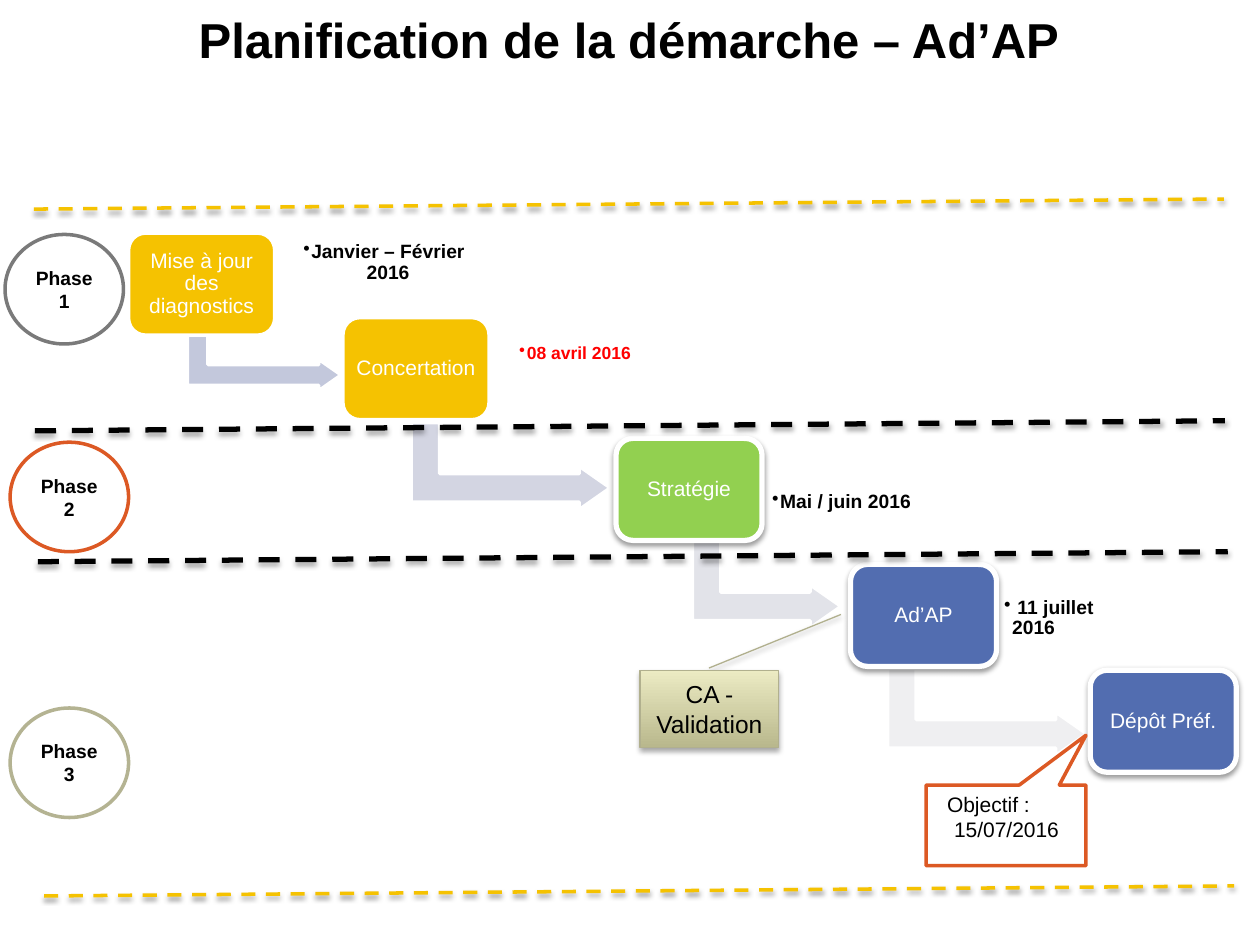
"""Build the Ad'AP planning slide: five cascading steps across three phases."""
from lxml.etree import SubElement
from pptx import Presentation
from pptx.dml.color import RGBColor
from pptx.enum.dml import MSO_LINE_DASH_STYLE as Dash
from pptx.enum.shapes import MSO_CONNECTOR as Connector, MSO_SHAPE as Shape
from pptx.enum.text import MSO_ANCHOR as Anchor, PP_ALIGN as Align
from pptx.oxml.ns import qn
from pptx.util import Pt

COLOURS = {
    "black": "000000", "white": "FFFFFF", "yellow": "F5C201", "green": "92D050",
    "blue": "526DB0", "red": "FF0000", "orange": "DC5924", "grey": "7A7A7A",
    "khaki": "B4B392", "olive": "B1B08E", "olive_dark": "B9B88D", "olive_light": "ECEBC3",
    "arrow1": "C3C8DC", "arrow2": "D3D5E2", "arrow3": "E2E3E9", "arrow4": "EFEFF1",
}
COLOURS = {name: RGBColor.from_string(value) for name, value in COLOURS.items()}


def write(shape, text, size, colour="black", bold=False, align=Align.CENTER,
          anchor=Anchor.MIDDLE, insets=(7.2, 3.6), spacing=1.0):
    frame = shape.text_frame
    frame.text = text
    frame.word_wrap = True
    frame.vertical_anchor = anchor
    frame.margin_left = frame.margin_right = Pt(insets[0])
    frame.margin_top = frame.margin_bottom = Pt(insets[1])
    for para in frame.paragraphs:
        para.alignment = align
        para.line_spacing = spacing
        for span in para.runs:
            span.font.name = "Arial"
            span.font.size = Pt(size)
            span.font.bold = bold
            span.font.color.rgb = COLOURS[colour]


def cast_shadow(shape, opacity=38, distance=1.6):
    effects = SubElement(shape._element.spPr, qn("a:effectLst"))
    shadow = SubElement(effects, qn("a:outerShdw"), blurRad=str(Pt(3.1)),
                        dist=str(Pt(distance)), dir="5400000", rotWithShape="0")
    tint = SubElement(shadow, qn("a:srgbClr"), val=str(COLOURS["black"]))
    SubElement(tint, qn("a:alpha"), val=str(opacity * 1000))


deck = Presentation()
deck.slide_width, deck.slide_height = Pt(720), Pt(540)
page = deck.slides.add_slide(deck.slide_layouts[6])

title = page.shapes.add_textbox(Pt(53.3), Pt(9.4), Pt(612), Pt(53.3))
write(title, "Planification de la démarche – Ad’AP", 28, bold=True,
      anchor=Anchor.TOP, insets=(0, 0), spacing=0.9)

steps = [
    ("Mise à jour des diagnostics", 73.5, 133.2, "yellow", (133, 161.3, 36, 88)),
    ("Concertation", 196, 181.5, "yellow", (267, 209.5, 49.7, 113.8)),
    ("Stratégie", 352, 250.5, "green", (413.3, 291.6, 49.7, 85)),
    ("Ad’AP", 486, 322.5, "blue", (539.3, 350, 49.7, 113.8)),
    ("Dépôt Préf.", 623, 383, "blue", None),
]
for number, (label, left, top, colour, arrow_frame) in enumerate(steps, 1):
    if arrow_frame:
        arrow = page.shapes.add_shape(Shape.BENT_UP_ARROW, *map(Pt, arrow_frame))
        arrow.rotation = 90
        for index, value in enumerate((0.328, 0.25, 0.358)):
            arrow.adjustments[index] = value
        arrow.fill.solid()
        arrow.fill.fore_color.rgb = COLOURS[f"arrow{number}"]
        arrow.line.color.rgb = COLOURS["white"]
        arrow.line.width = Pt(2)
        arrow.shadow.inherit = False
    step = page.shapes.add_shape(Shape.ROUNDED_RECTANGLE, Pt(left), Pt(top), Pt(83.5), Pt(58.3))
    step.fill.solid()
    step.fill.fore_color.rgb = COLOURS[colour]
    step.line.color.rgb = COLOURS["white"]
    step.line.width = Pt(2 if colour == "yellow" else 3)
    if colour == "yellow":
        step.shadow.inherit = False
    else:
        cast_shadow(step)
    write(step, label, 12, "white", insets=(3.6, 3.6), spacing=0.9)

dates = [
    ("Janvier – Février 2016", (160.5, 134, 118, 32.4), 11, "black", Align.CENTER),
    ("08 avril 2016", (292.3, 185, 87.8, 34), 10, "red", Align.LEFT),
    ("Mai / juin 2016", (437, 263.5, 129.6, 46.8), 11, "black", Align.LEFT),
    (" 11 juillet 2016", (569.5, 329.8, 78.5, 46.8), 11, "black", Align.LEFT),
]
for text, frame, size, colour, align in dates:
    date = page.shapes.add_textbox(*map(Pt, frame))
    write(date, text, size, colour, True, align, insets=(4.3, 4.3), spacing=0.9)
    properties = date.text_frame.paragraphs[0]._p.get_or_add_pPr()
    properties.set("marL", str(Pt(4.5)))
    properties.set("indent", str(-Pt(4.5)))
    SubElement(properties, qn("a:buChar"), char="•")

separators = [
    (20, 246.2, "black", 3, 35, 1.8),
    (25.2, 512, "yellow", 2, 38, 1.6),
    (19.4, 119.5, "yellow", 2, 38, 1.6),
    (21.6, 321, "black", 3, 35, 1.8),
]
for left, top, colour, width, opacity, distance in separators:
    separator = page.shapes.add_connector(
        Connector.STRAIGHT, Pt(left), Pt(top), Pt(left + 680), Pt(top - 5.75))
    separator.line.color.rgb = COLOURS[colour]
    separator.line.width = Pt(width)
    separator.line.dash_style = Dash.DASH
    cast_shadow(separator, opacity, distance)

phases = [(2.9, 134, "grey"), (5.8, 252.7, "orange"), (5.8, 404.6, "khaki")]
for number, (left, top, colour) in enumerate(phases, 1):
    phase = page.shapes.add_shape(Shape.OVAL, Pt(left), Pt(top), Pt(67.7), Pt(62.6))
    phase.fill.solid()
    phase.fill.fore_color.rgb = COLOURS["white"]
    phase.line.color.rgb = COLOURS[colour]
    phase.line.width = Pt(2)
    phase.shadow.inherit = False
    write(phase, f"Phase {number}", 11, bold=True)

validation = page.shapes.add_shape(
    Shape.LINE_CALLOUT_1, Pt(365.8), Pt(383), Pt(79.2), Pt(44))
for index, value in enumerate((-0.028, 0.497, -0.724, 1.449)):
    validation.adjustments[index] = value
validation.fill.gradient()
validation.fill.gradient_angle = 90
for stop, colour in zip(validation.fill.gradient_stops, ("olive_dark", "olive_light")):
    stop.color.rgb = COLOURS[colour]
validation.line.color.rgb = COLOURS["olive"]
validation.line.width = Pt(0.75)
cast_shadow(validation, 35, 1.8)
write(validation, "CA - Validation", 14)

goal = page.shapes.add_shape(
    Shape.RECTANGULAR_CALLOUT, Pt(529.2), Pt(448.6), Pt(91.4), Pt(46.1))
goal.adjustments[0], goal.adjustments[1] = 0.5, -1.118
goal.fill.solid()
goal.fill.fore_color.rgb = COLOURS["white"]
goal.line.color.rgb = COLOURS["orange"]
goal.line.width = Pt(2)
goal.shadow.inherit = False
write(goal, "Objectif :\n15/07/2016", 12, align=Align.LEFT, anchor=Anchor.TOP, insets=(12, 3.6))
goal.text_frame.paragraphs[1]._p.get_or_add_pPr().set("marL", str(Pt(4)))

deck.save("out.pptx")
